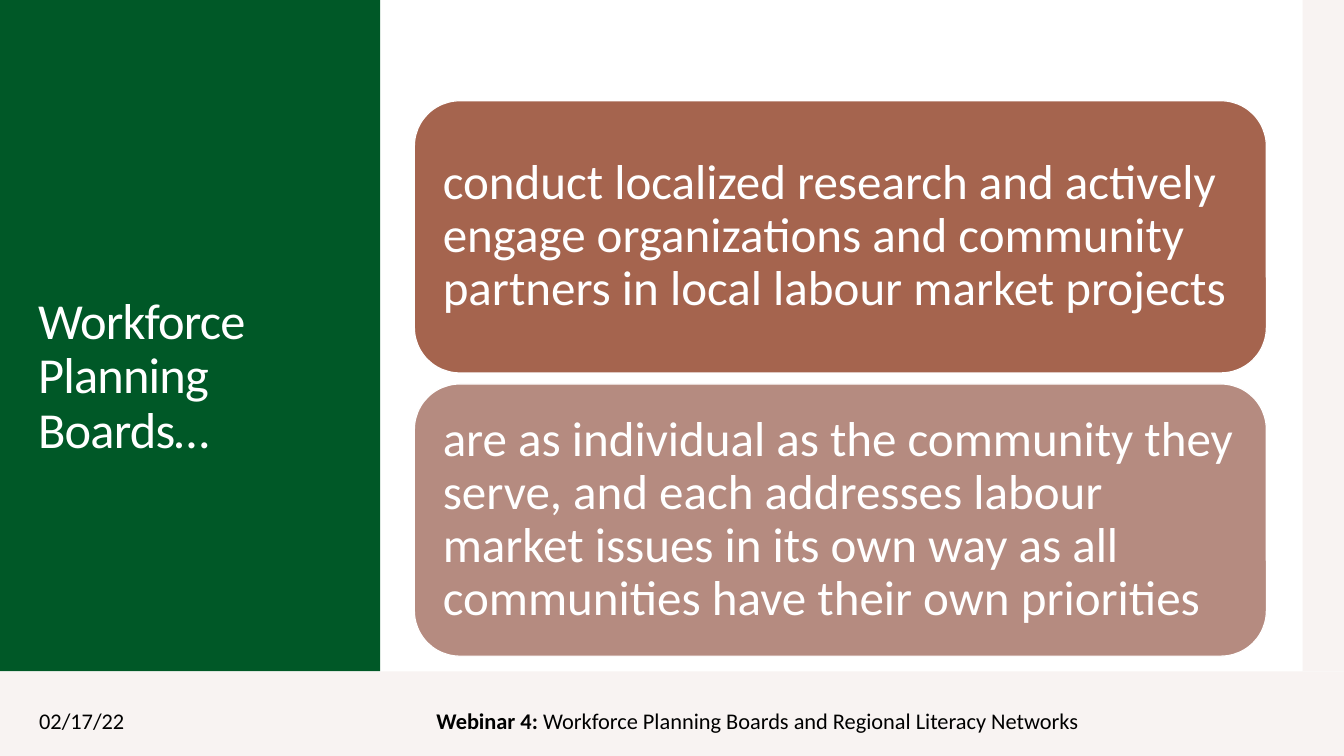
from pptx import Presentation
from pptx.dml.color import RGBColor
from pptx.enum.shapes import MSO_SHAPE
from pptx.enum.text import MSO_ANCHOR, PP_ALIGN
from pptx.util import Emu, Pt

RECT, ROUNDED = MSO_SHAPE.RECTANGLE, MSO_SHAPE.ROUNDED_RECTANGLE
MIDDLE, LEFT = MSO_ANCHOR.MIDDLE, PP_ALIGN.LEFT
PX = 9144
FONT = "Calibri"
COLORS = {"band": "F8F3F2", "green": "005827", "rust": "A5644E",
          "rose": "B58B80", "white": "FFFFFF", "black": "000000"}
CARDS = [
    ("rust", "conduct localized research and actively engage organizations "
             "and community partners in local labour market projects"),
    ("rose", "are as individual as the community they serve, and each addresses "
             "labour market issues in its own way as all communities have their "
             "own priorities"),
]


def px(n):
    """Turn px into EMU."""
    return Emu(n * PX)


def rgb(name):
    """Look up a named colour."""
    return RGBColor.from_string(COLORS[name])


def add_block(s, box, color, kind=RECT):
    """Draw a plain filled shape without a line."""
    sp = s.shapes.add_shape(kind, *map(px, box))
    sp.shadow.inherit = False
    sp.fill.solid()
    sp.fill.fore_color.rgb = rgb(color)
    sp.line.fill.background()
    return sp


def set_text(sp, runs, size, color, spacing=1.0):
    """Write one left-aligned paragraph of (text, bold) runs."""
    tf = sp.text_frame
    tf.word_wrap = True
    tf.vertical_anchor = MIDDLE
    p = tf.paragraphs[0]
    p.alignment = LEFT
    p.line_spacing = spacing
    for text, bold in runs:
        r = p.add_run()
        r.text = text
        r.font.name = FONT
        r.font.size = Pt(size)
        r.font.bold = bold
        r.font.color.rgb = rgb(color)
    return p


def add_title_panel(s, x, y, w, h):
    """Draw the green side panel with the title."""
    add_block(s, (x, y, w, h), "green")
    sp = s.shapes.add_textbox(px(x + 28), px(y + 123), px(w - 55), px(503))
    p = set_text(sp, [("Workforce Planning Boards…", False)], 36, "white", 0.9)
    p.runs[0].font._element.set("spc", "-60")


def add_cards(s, x, y, w, h, gap):
    """Stack the rounded cards evenly in the box."""
    card_h = (h - gap * (len(CARDS) - 1)) // len(CARDS)
    for i, (color, text) in enumerate(CARDS):
        sp = add_block(s, (x, y + i * (card_h + gap), w, card_h), color, ROUNDED)
        sp.line.color.rgb = rgb("white")
        sp.line.width = Pt(0.85)
        tf = sp.text_frame
        tf.margin_left = tf.margin_right = px(15)
        tf.margin_top = tf.margin_bottom = px(15)
        set_text(sp, [(text, False)], 35, "white", 0.9)


def add_footer(s, x, y, w, h):
    """Draw the bottom band with the date and webinar name."""
    add_block(s, (x, y, w, h), "band")
    parts = [
        (29, 300, [("02/17/22", False)]),
        (423, 726, [("Webinar 4: ", True),
                    ("Workforce Planning Boards and Regional Literacy Networks", False)]),
    ]
    for left, width, runs in parts:
        sp = s.shapes.add_textbox(px(x + left), px(y + 29), px(width), px(40))
        set_text(sp, runs, 16, "black")


def main():
    """Build and save the slide."""
    prs = Presentation()
    prs.slide_width, prs.slide_height = px(1333), px(750)
    s = prs.slides.add_slide(prs.slide_layouts[6])
    add_footer(s, 0, 666, 1333, 84)
    add_block(s, (1292, 0, 41, 666), "band")
    add_title_panel(s, 0, 0, 377, 666)
    add_cards(s, 411, 100, 845, 551, 11)
    prs.save("out.pptx")


if __name__ == "__main__":
    main()
